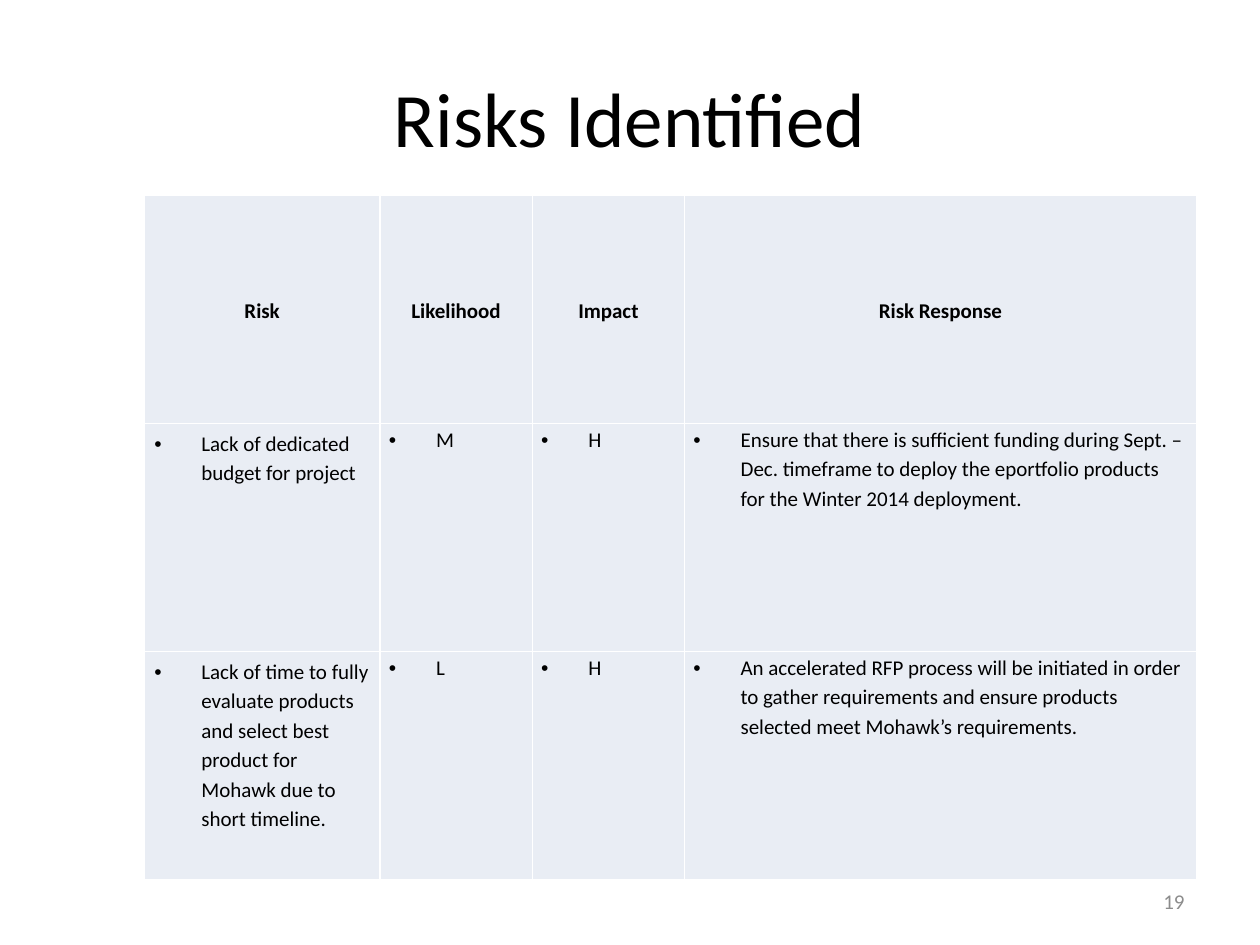
from lxml import etree
from pptx import Presentation
from pptx.dml.color import RGBColor
from pptx.enum.text import MSO_ANCHOR, PP_ALIGN
from pptx.oxml.ns import qn
from pptx.util import Cm, Pt

LEFT, CENTER, RIGHT = PP_ALIGN.LEFT, PP_ALIGN.CENTER, PP_ALIGN.RIGHT
TOP, MIDDLE = MSO_ANCHOR.TOP, MSO_ANCHOR.MIDDLE

FACE = "Calibri"
BLACK, GRAY, WHITE, PALE = "000000", "8C8C8C", "FFFFFF", "E9EDF4"
INDENT, TAB = Cm(0.95), Cm(0.64)
WIDTHS = [4.75, 3.07, 3.07, 10.32]
ROW_H = 4.6
HEADS = ["Risk", "Likelihood", "Impact", "Risk Response"]
RISKS = [
    ["Lack of dedicated budget for project", "M", "H",
     "Ensure that there is sufficient funding during Sept. – Dec. timeframe "
     "to deploy the eportfolio products for the Winter 2014 deployment."],
    ["Lack of time to fully evaluate products and select best product for "
     "Mohawk due to short timeline.", "L", "H",
     "An accelerated RFP process will be initiated in order to gather "
     "requirements and ensure products selected meet Mohawk’s requirements."],
]


def color(code):
    return RGBColor.from_string(code)


def apply(target, form):
    for name, value in form.items():
        setattr(target, name, value)


def write(para, text, size, code, bold=False):
    run = para.add_run()
    run.text = text
    apply(run.font, {"name": FACE, "size": Pt(size), "bold": bold})
    run.font.color.rgb = color(code)


def add_text(slide, box, text, size, code, align):
    frame = slide.shapes.add_textbox(*map(Cm, box)).text_frame
    apply(frame, {"word_wrap": True, "vertical_anchor": MIDDLE})
    para = frame.paragraphs[0]
    para.alignment = align
    write(para, text, size, code)


def add_bullet(para):
    """Give the paragraph a hanging bullet and a tab stop."""
    props = para._p.get_or_add_pPr()
    apply_xml = {"marL": INDENT, "indent": -INDENT}
    for name, value in apply_xml.items():
        props.set(name, str(int(value)))
    etree.SubElement(props, qn("a:buFont"), typeface="Arial")
    etree.SubElement(props, qn("a:buChar"), char="•")
    tabs = etree.SubElement(props, qn("a:tabLst"))
    etree.SubElement(tabs, qn("a:tab"), pos=str(int(TAB)), algn="l")


def add_edges(cell):
    props = cell._tc.get_or_add_tcPr()
    for side in ("lnL", "lnR", "lnT", "lnB"):
        line = etree.SubElement(props, qn(f"a:{side}"), w=str(int(Pt(1))))
        fill = etree.SubElement(line, qn("a:solidFill"))
        etree.SubElement(fill, qn("a:srgbClr"), val=WHITE)


def fill_cell(cell, text, head, tight):
    """Style a cell; tight cells have no space above and below."""
    add_edges(cell)
    cell.fill.solid()
    cell.fill.fore_color.rgb = color(PALE)
    side, edge = (Cm(0.18), Cm(0)) if tight else (Cm(0.2), Cm(0.08))
    apply(cell, {"margin_left": side, "margin_right": side,
                 "margin_top": edge, "margin_bottom": edge,
                 "vertical_anchor": MIDDLE if head else TOP})
    para = cell.text_frame.paragraphs[0]
    if not head:
        add_bullet(para)
    apply(para, {"alignment": CENTER if head else LEFT, "line_spacing": 1.15,
                 "space_after": Pt(0 if head else 6)})
    write(para, text, 12, BLACK, head)


def add_grid(slide, left, top):
    rows = [HEADS] + RISKS
    size = sum(WIDTHS), ROW_H * len(rows)
    table = slide.shapes.add_table(
        len(rows), len(HEADS), *map(Cm, (left, top, *size))).table
    for col, width in zip(table.columns, WIDTHS):
        col.width = Cm(width)
    for r, row in enumerate(rows):
        table.rows[r].height = Cm(ROW_H)
        for c, text in enumerate(row):
            fill_cell(table.cell(r, c), text, r == 0, r > 0 and c > 0)


def main():
    deck = Presentation()
    apply(deck, {"slide_width": Cm(25.4), "slide_height": Cm(19.05)})
    slide = deck.slides.add_slide(deck.slide_layouts[6])
    add_text(slide, (1.27, 0.76, 22.86, 3.18), "Risks Identified", 44, BLACK, CENTER)
    add_grid(slide, 2.91, 3.94)
    add_text(slide, (18.2, 17.66, 5.93, 1.01), "19", 12, GRAY, RIGHT)
    deck.save("out.pptx")


if __name__ == "__main__":
    main()
